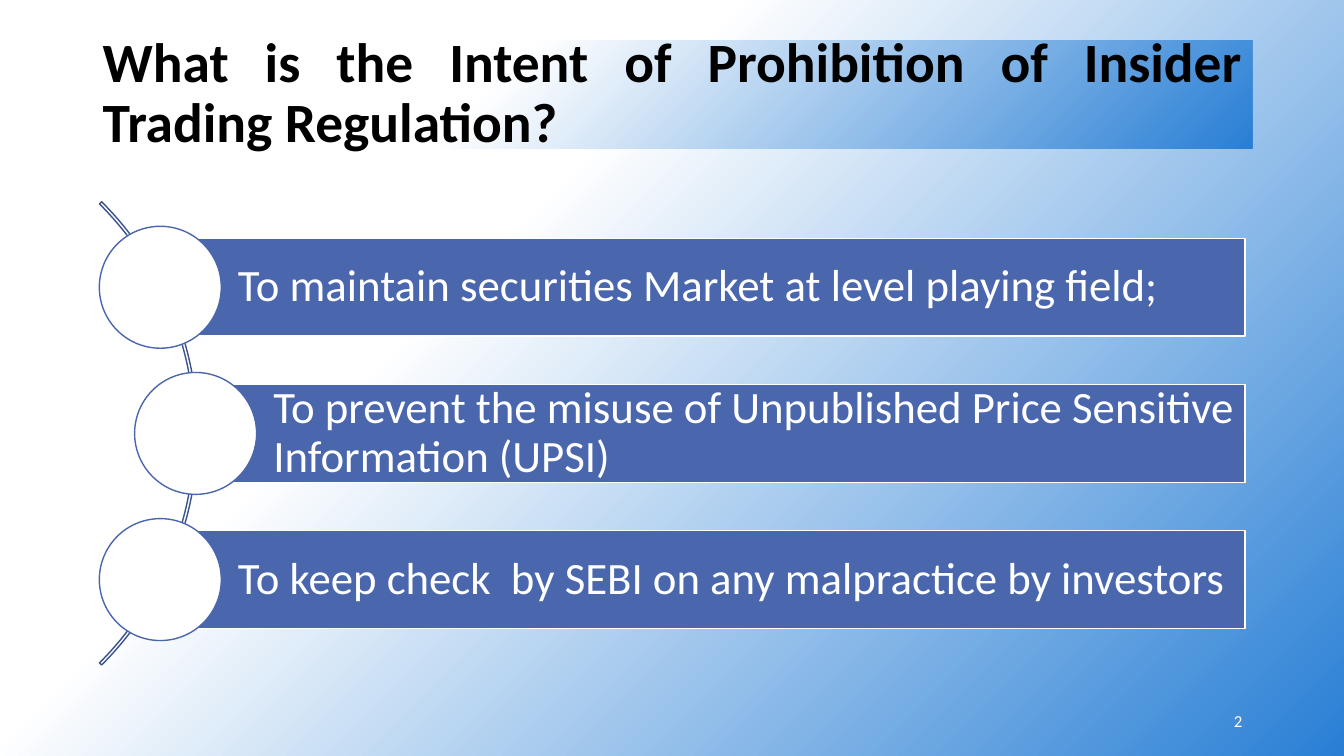
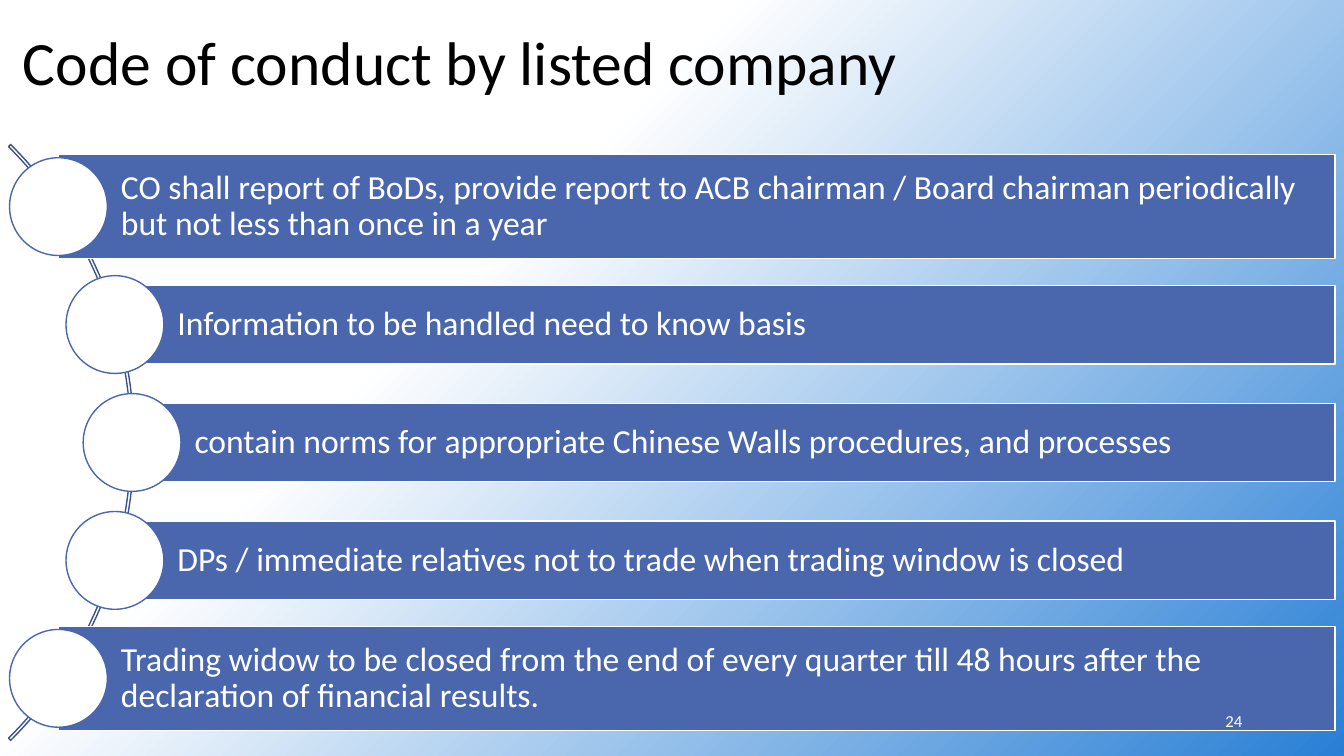
"""Build two slides that list insider trading rules along a curved arc."""
from copy import deepcopy
from dataclasses import dataclass

from pptx import Presentation
from pptx import util as u
from pptx.dml import color
from pptx.enum import shapes, text
from pptx.oxml import ns

FONT = "Calibri"
BLACK, WHITE, BLUE, ARC_BLUE = "000000", "FFFFFF", "4A66AC", "3B528A"
GRADIENT = ((0, WHITE), (0.35, WHITE), (1, "297FD5"))
GRADIENT_ANGLE = 315
ARC_START, ARC_END, ARC_THICKNESS = 189, 27, 0.03
NUMBER_BOX = (9.42, 6.95, 3, 0.4)


@dataclass(frozen=True)
class Item:
    """One bar of the list; its left edge is also the centre of its circle."""
    left: float
    height: float
    wording: str


@dataclass(frozen=True)
class Title:
    """Wording, place and format of a slide title."""
    wording: str
    box: tuple[float, float, float, float]
    size: float
    bold: bool = False
    align: text.PP_ALIGN = text.PP_ALIGN.LEFT
    shaded: bool = False


@dataclass(frozen=True)
class CurvedList:
    """Measures of the arc and the items spaced evenly along it."""
    arc_left: float
    arc_size: float
    middle: float
    pitch: float
    circle: float
    right: float
    indent: float
    inset: float
    size: float
    items: tuple[Item, ...]


@dataclass(frozen=True)
class Page:
    """Everything that differs from one slide to the next."""
    number: str
    title: Title
    content: CurvedList


PAGES = (
    Page(
        "2",
        Title("What is the Intent of Prohibition of Insider Trading Regulation?",
              (0.92, 0.4, 11.5, 1.07), 39.6, bold=True,
              align=text.PP_ALIGN.JUSTIFY, shaded=True),
        CurvedList(-4.54, 6.5, 4.3, 1.45, 1.21, 12.35, 0.77, 0.09, 32, (
            Item(1.59, 0.97, "To maintain securities Market at level playing field;"),
            Item(1.94, 0.97, "To prevent the misuse of Unpublished Price Sensitive "
                             "Information (UPSI)"),
            Item(1.59, 0.97, "To keep check  by SEBI on any malpractice by investors"),
        )),
    ),
    Page(
        "24",
        Title("Code of conduct by listed company", (0.13, 0, 13.2, 1.29), 44),
        CurvedList(-7.03, 8.36, 4.39, 1.17, 0.97, 13.24, 0.62, 0.07, 24, (
            Item(0.58, 1.03, "CO shall report of BoDs, provide report to ACB chairman / "
                             "Board chairman periodically but not less than once in a year"),
            Item(1.14, 0.78, "Information to be handled need to know basis"),
            Item(1.31, 0.78, "contain norms for appropriate Chinese Walls procedures, "
                             "and processes"),
            Item(1.14, 0.78, "DPs / immediate relatives not to trade when trading window "
                             "is closed"),
            Item(0.58, 1.03, "Trading widow to be closed from the end of every quarter till "
                             "48 hours after the declaration of financial results."),
        )),
    ),
)


def rgb(value: str) -> color.RGBColor:
    """Turn a hex string into a colour."""
    return color.RGBColor.from_string(value)


def inches(box) -> list:
    """Turn left, top, width and height into lengths."""
    return [u.Inches(value) for value in box]


def apply_gradient(fill, element) -> None:
    """Give a fill the shared diagonal gradient."""
    fill.gradient()
    fill.gradient_angle = GRADIENT_ANGLE
    stop_list = element.find(".//" + ns.qn("a:gsLst"))
    stop_list.append(deepcopy(stop_list[-1]))
    for stop, (position, value) in zip(fill.gradient_stops, GRADIENT):
        stop.position = position
        stop.color.rgb = rgb(value)


def write(shape, wording: str, *, size: float, colour: str = WHITE, bold: bool = False,
          align=text.PP_ALIGN.LEFT, spacing: float = 1.0,
          insets=(0.1, 0.05, 0.1, 0.05)) -> None:
    """Put formatted, vertically centred text in a shape."""
    frame = shape.text_frame
    frame.word_wrap = True
    frame.vertical_anchor = text.MSO_ANCHOR.MIDDLE
    (frame.margin_left, frame.margin_top,
     frame.margin_right, frame.margin_bottom) = inches(insets)
    paragraph = frame.paragraphs[0]
    paragraph.alignment = align
    paragraph.line_spacing = spacing
    run = paragraph.add_run()
    run.text = wording
    run.font.name = FONT
    run.font.size = u.Pt(size)
    run.font.bold = bold
    run.font.color.rgb = rgb(colour)


def add_outlined(slide, kind, box, line: str, fill: str | None = None):
    """Add a preset shape with a thin outline and an optional fill."""
    shape = slide.shapes.add_shape(kind, *inches(box))
    shape.shadow.inherit = False
    if fill:
        shape.fill.solid()
        shape.fill.fore_color.rgb = rgb(fill)
    else:
        shape.fill.background()
    shape.line.color.rgb = rgb(line)
    shape.line.width = u.Pt(1)
    return shape


def draw_title(slide, title: Title) -> None:
    """Draw the slide title."""
    shape = slide.shapes.add_textbox(*inches(title.box))
    if title.shaded:
        apply_gradient(shape.fill, shape.element)
    write(shape, title.wording, size=title.size, colour=BLACK, bold=title.bold,
          align=title.align, spacing=0.9)


def draw_list(slide, content: CurvedList) -> None:
    """Draw the arc with its bars and circles."""
    arc_size, circle, inset = content.arc_size, content.circle, content.inset
    arc = add_outlined(slide, shapes.MSO_SHAPE.BLOCK_ARC,
                       (content.arc_left, content.middle - arc_size / 2, arc_size, arc_size),
                       ARC_BLUE)
    for index, value in enumerate((ARC_START, ARC_END, ARC_THICKNESS / arc_size)):
        arc.adjustments[index] = value
    first = content.middle - content.pitch * (len(content.items) - 1) / 2
    for index, item in enumerate(content.items):
        centre = first + index * content.pitch
        bar = add_outlined(slide, shapes.MSO_SHAPE.RECTANGLE,
                           (item.left, centre - item.height / 2,
                            content.right - item.left, item.height), WHITE, BLUE)
        write(bar, item.wording, size=content.size, spacing=0.9,
              insets=(content.indent, inset, inset, inset))
        add_outlined(slide, shapes.MSO_SHAPE.OVAL,
                     (item.left - circle / 2, centre - circle / 2, circle, circle),
                     BLUE, WHITE)


def draw_page(presentation, page: Page) -> None:
    """Add one slide with background, title, list and number."""
    slide = presentation.slides.add_slide(presentation.slide_layouts[6])
    apply_gradient(slide.background.fill, slide.element)
    draw_title(slide, page.title)
    draw_list(slide, page.content)
    number = slide.shapes.add_textbox(*inches(NUMBER_BOX))
    write(number, page.number, size=12, align=text.PP_ALIGN.RIGHT)


def main() -> None:
    """Build and save the presentation."""
    presentation = Presentation()
    presentation.slide_width = u.Inches(13.33)
    presentation.slide_height = u.Inches(7.5)
    for page in PAGES:
        draw_page(presentation, page)
    presentation.save("out.pptx")


if __name__ == "__main__":
    main()
